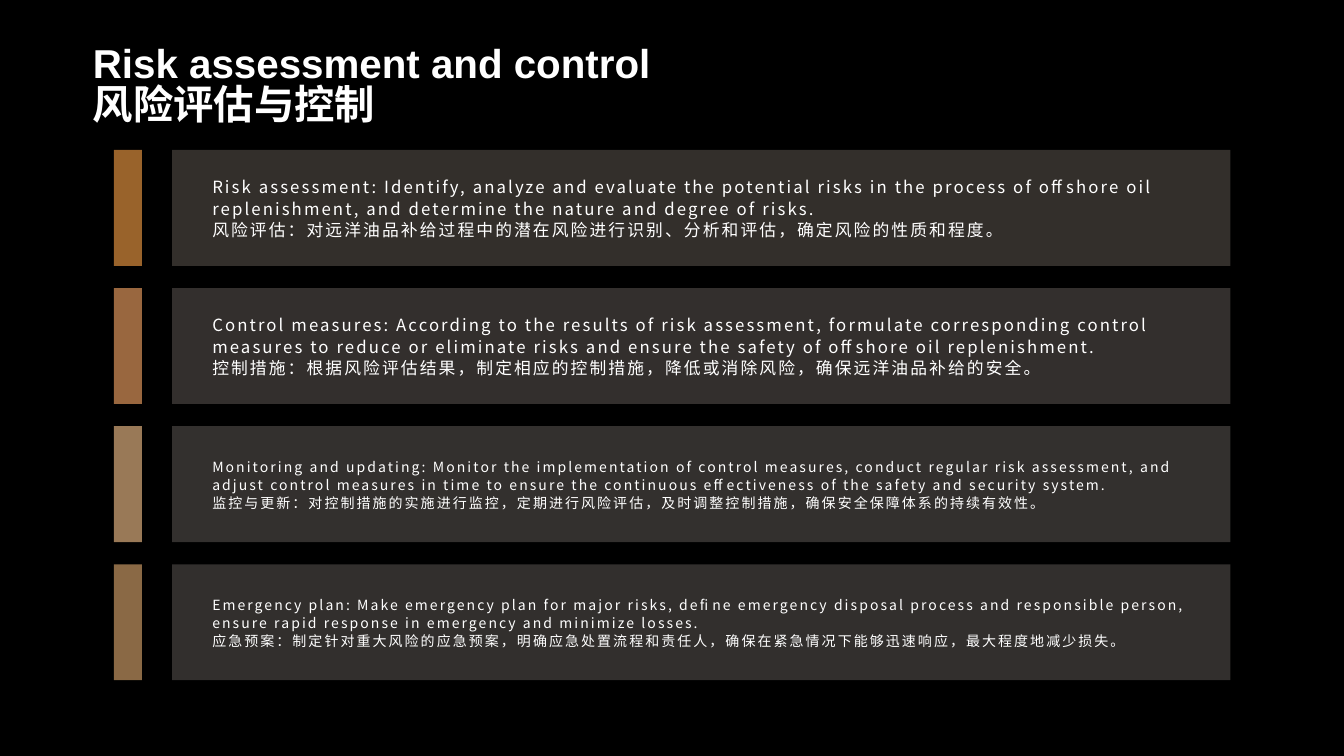
from copy import deepcopy
from dataclasses import dataclass

from lxml.etree import SubElement
from pptx import Presentation
from pptx.dml.color import RGBColor
from pptx.enum.shapes import MSO_SHAPE as Preset
from pptx.enum.text import MSO_ANCHOR as Anchor, MSO_AUTO_SIZE as AutoSize, PP_ALIGN as Align
from pptx.oxml.ns import qn
from pptx.util import Cm, Pt


@dataclass(frozen=True)
class Theme:
    background: str = "000000"
    text: str = "FFFFFF"
    title_font: str = "Arial"
    body_font: str = "Noto Sans CJK SC"
    title_size: float = 28.8
    large_size: float = 12
    small_size: float = 10
    letter_spacing: float = 1.5
    title_line_spacing: float = 0.84
    body_line_spacing: float = 1.07
    panel_opacity: int = 20
    marker_opacity: int = 60


@dataclass(frozen=True)
class Box:
    left: float
    top: float
    width: float
    height: float

    def lengths(self):
        return Cm(self.left), Cm(self.top), Cm(self.width), Cm(self.height)


THEME = Theme()
TITLE_BOX = Box(2.34, 0.99, 29.21, 2.39)
ROWS_BOX = Box(2.87, 3.78, 28.14, 13.36)
ROW_HEIGHT = 2.92
ROW_PITCH = 3.48
MARKER_WIDTH = 0.71
PANEL_OFFSET = 1.47

TITLE = ("Risk assessment and control", "风险评估与控制")

# Panel colour, marker colour, text size, English text, Chinese text
ROWS = (
    ("FFEDDB", "FFA649", THEME.large_size,
     "Risk assessment: Identify, analyze and evaluate the potential risks in the process of "
     "offshore oil replenishment, and determine the nature and degree of risks.",
     "风险评估：对远洋油品补给过程中的潜在风险进行识别、分析和评估，确定风险的性质和程度。"),
    ("FFEFE1", "FFAD69", THEME.large_size,
     "Control measures: According to the results of risk assessment, formulate corresponding "
     "control measures to reduce or eliminate risks and ensure the safety of offshore oil "
     "replenishment.",
     "控制措施：根据风险评估结果，制定相应的控制措施，降低或消除风险，确保远洋油品补给的安全。"),
    ("FFF4E9", "FFCA92", THEME.small_size,
     "Monitoring and updating: Monitor the implementation of control measures, conduct regular "
     "risk assessment, and adjust control measures in time to ensure the continuous "
     "effectiveness of the safety and security system.",
     "监控与更新：对控制措施的实施进行监控，定期进行风险评估，及时调整控制措施，确保安全保障体系的持续有效性。"),
    ("FAEFE3", "E6B074", THEME.small_size,
     "Emergency plan: Make emergency plan for major risks, define emergency disposal process "
     "and responsible person, ensure rapid response in emergency and minimize losses.",
     "应急预案：制定针对重大风险的应急预案，明确应急处置流程和责任人，确保在紧急情况下能够迅速响应，最大程度地减少损失。"),
)


def apply_format(target, values):
    for name, value in values.items():
        setattr(target, name, value)


def add_run(paragraph, text, font_name, size, bold=False, letter_spacing=0):
    run = paragraph.add_run()
    run.text = text
    apply_format(run.font, {"name": font_name, "size": Pt(size), "bold": bold})
    run.font.color.rgb = RGBColor.from_string(THEME.text)
    properties = run.font._element
    if letter_spacing:
        properties.set("spc", str(round(letter_spacing * 100)))
    SubElement(properties, qn("a:ea"), typeface=THEME.body_font)
    return run


def add_block(slide, box, color, opacity):
    block = slide.shapes.add_shape(Preset.RECTANGLE, *box.lengths())
    block.shadow.inherit = False
    block.line.fill.background()
    block.fill.solid()
    block.fill.fore_color.rgb = RGBColor.from_string(color)
    color_element = block._element.spPr.find(qn("a:solidFill"))[0]
    SubElement(color_element, qn("a:alpha"), val=str(opacity * 1000))


def add_title(slide, box):
    title = slide.shapes.title
    apply_format(title, dict(zip(("left", "top", "width", "height"), box.lengths())))
    apply_format(title.text_frame, {
        "margin_left": 0, "margin_top": 0, "margin_right": 0, "margin_bottom": 0,
        "vertical_anchor": Anchor.MIDDLE, "word_wrap": True, "auto_size": AutoSize.NONE,
    })
    paragraph = title.text_frame.paragraphs[0]
    apply_format(paragraph, {"alignment": Align.LEFT, "line_spacing": THEME.title_line_spacing})
    english, chinese = TITLE
    first_run = add_run(paragraph, english, THEME.title_font, THEME.title_size, bold=True)
    # The line break takes the same type size as the words around it
    paragraph.add_line_break()
    paragraph._p.find(qn("a:br")).append(deepcopy(first_run.font._element))
    add_run(paragraph, chinese, THEME.title_font, THEME.title_size, bold=True)


def add_row_text(slide, box, size, texts):
    text_frame = slide.shapes.add_textbox(*box.lengths()).text_frame
    apply_format(text_frame, {
        "word_wrap": True, "vertical_anchor": Anchor.MIDDLE, "auto_size": AutoSize.NONE,
    })
    for index, text in enumerate(texts):
        paragraph = text_frame.add_paragraph() if index else text_frame.paragraphs[0]
        apply_format(paragraph, {
            "alignment": Align.LEFT, "line_spacing": THEME.body_line_spacing,
        })
        add_run(paragraph, text, THEME.body_font, size, letter_spacing=THEME.letter_spacing)


def add_row(slide, box, panel_color, marker_color, size, texts):
    panel = Box(box.left + PANEL_OFFSET, box.top, box.width - PANEL_OFFSET, box.height)
    marker = Box(box.left, box.top, MARKER_WIDTH, box.height)
    text_box = Box(panel.left + 0.76, panel.top + 0.25, panel.width - 1.17, panel.height - 0.5)
    add_block(slide, panel, panel_color, THEME.panel_opacity)
    add_block(slide, marker, marker_color, THEME.marker_opacity)
    add_row_text(slide, text_box, size, texts)


def add_rows(slide, box):
    for index, (panel_color, marker_color, size, *texts) in enumerate(ROWS):
        row_box = Box(box.left, box.top + index * ROW_PITCH, box.width, ROW_HEIGHT)
        add_row(slide, row_box, panel_color, marker_color, size, texts)


def main():
    presentation = Presentation()
    apply_format(presentation, {"slide_width": Cm(33.87), "slide_height": Cm(19.05)})
    slide = presentation.slides.add_slide(presentation.slide_layouts.get_by_name("Title Only"))

    # Background
    slide.background.fill.solid()
    slide.background.fill.fore_color.rgb = RGBColor.from_string(THEME.background)

    # Title and the four risk rows
    add_title(slide, TITLE_BOX)
    add_rows(slide, ROWS_BOX)
    presentation.save("out.pptx")


if __name__ == "__main__":
    main()
